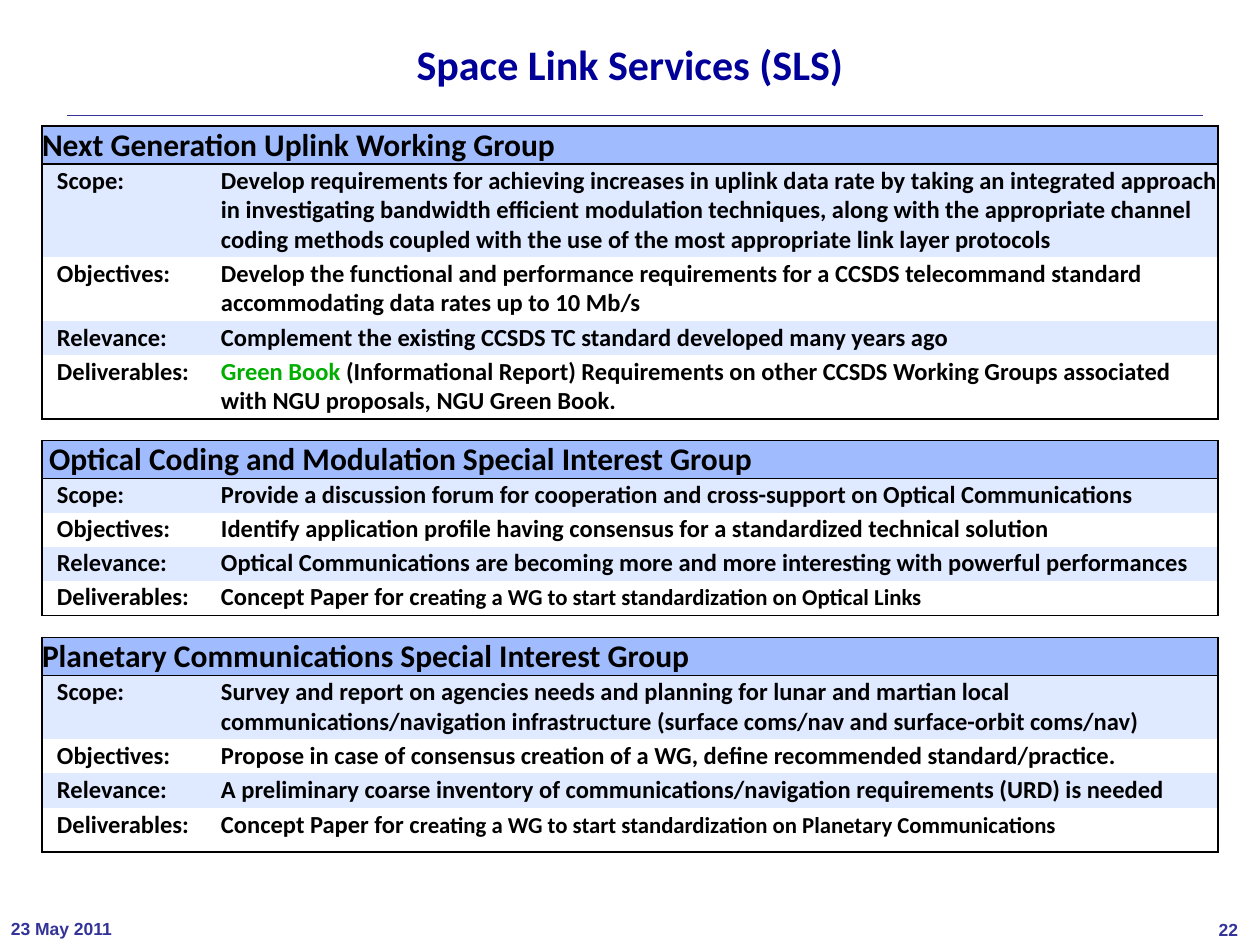
from lxml.etree import SubElement
from pptx import Presentation
from pptx.dml.color import RGBColor
from pptx.enum.shapes import MSO_CONNECTOR
from pptx.enum.text import MSO_ANCHOR, PP_ALIGN
from pptx.oxml.ns import qn
from pptx.util import Emu, Pt

SCALE = 914400 // 126
BLACK, TITLE_BLUE, RULE_BLUE = "000000", "000099", "333399"
HEADING_FILL, BAND_FILL, GREEN = "A0BCFE", "DFE9FF", "00AE00"
TABLE_LEFT, TABLE_TOP = 42, 126
COLUMN_WIDTHS = [179, 997]
HEADING_HEIGHT, SPACER_HEIGHT = 37, 22
LABELS = ["Scope:", "Objectives:", "Relevance:", "Deliverables:"]
LABEL_INDENT, CELL_INSET = 15, 2

GROUPS = [
    ("Next Generation Uplink Working Group", [93, 64, 34, 64], [
        [("Develop requirements for achieving increases in uplink data rate by taking an integrated "
          "approach in investigating bandwidth efficient modulation techniques, along with the "
          "appropriate channel coding methods coupled with the use of the most appropriate link "
          "layer protocols", {})],
        [("Develop the functional and performance requirements for a CCSDS telecommand standard "
          "accommodating data rates up to 10 Mb/s", {})],
        [("Complement the existing CCSDS TC standard developed many years ago", {})],
        [("Green Book ", {"color": GREEN}),
         ("(Informational Report) Requirements on other CCSDS Working Groups associated with "
          "NGU proposals, NGU Green Book.", {})],
    ]),
    (" Optical Coding and Modulation Special Interest Group", [34, 34, 34, 35], [
        [("Provide a discussion forum for cooperation and cross-support on Optical "
          "Communications", {})],
        [("Identify application profile having consensus for a standardized technical solution", {})],
        [("Optical Communications are becoming more and more interesting with powerful "
          "performances", {})],
        [("Concept Paper for c", {}),
         ("reating a WG to start standardization on Optical Links", {"size": 13})],
    ]),
    ("Planetary Communications Special Interest Group", [64, 34, 35, 44], [
        [("Survey and report on agencies needs and planning for lunar and martian local "
          "communications/navigation infrastructure (surface coms/nav and surface-orbit "
          "coms/nav)", {})],
        [("Propose in case of consensus creation of a WG, define recommended "
          "standard/practice.", {})],
        [("A preliminary coarse inventory of communications/navigation requirements (URD) is "
          "needed", {})],
        [("Concept Paper for c", {}),
         ("reating a WG to start standardization on Planetary Communications", {"size": 13})],
    ]),
]


def px(length):
    return Emu(length * SCALE)


def rgb(color):
    return RGBColor.from_string(color)


def write(para, text, size=14, font="Calibri", color=BLACK):
    span = para.add_run()
    span.text = text
    span.font.size = Pt(size)
    span.font.name = font
    span.font.bold = True
    span.font.color.rgb = rgb(color)


def add_text(page, left, top, width, height, text, align=PP_ALIGN.LEFT, spacing=1.0, **style):
    box = page.shapes.add_textbox(px(left), px(top), px(width), px(height))
    frame = box.text_frame
    frame.word_wrap = True
    frame.margin_left = frame.margin_right = 0
    frame.margin_top = frame.margin_bottom = 0
    frame.vertical_anchor = MSO_ANCHOR.MIDDLE
    para = frame.paragraphs[0]
    para.alignment = align
    para.line_spacing = spacing
    write(para, text, **style)


def add_rule(page, left, right, top):
    rule = page.shapes.add_connector(MSO_CONNECTOR.STRAIGHT, px(left), px(top), px(right), px(top))
    rule.line.color.rgb = rgb(RULE_BLUE)
    rule.line.width = Pt(0.13)
    SubElement(rule._element.spPr, qn("a:effectLst"))


def format_cell(cell, edges, fill=None, inset=0):
    cell.margin_left = cell.margin_right = 0
    cell.margin_top = cell.margin_bottom = px(inset)
    properties = cell._tc.get_or_add_tcPr()
    for edge in "LRTB":
        line = SubElement(properties, qn(f"a:ln{edge}"), w=str(Pt(1)))
        if edge in edges:
            solid = SubElement(line, qn("a:solidFill"))
            SubElement(solid, qn("a:srgbClr"), val=BLACK)
        else:
            SubElement(line, qn("a:noFill"))
    if fill:
        cell.fill.solid()
        cell.fill.fore_color.rgb = rgb(fill)
    else:
        cell.fill.background()


def shrink_empty(cell):
    cell.text_frame.paragraphs[0]._p.get_or_add_endParaRPr().set("sz", "800")


def fill_spanning_row(table, row, edges, fill=None, text=""):
    first, second = table.cell(row, 0), table.cell(row, 1)
    first.merge(second)
    format_cell(first, edges, fill)
    format_cell(second, edges.replace("L", ""), fill)
    shrink_empty(second)
    if text:
        write(first.text_frame.paragraphs[0], text, size=18)
    else:
        shrink_empty(first)


def fill_body_row(table, row, index, spans):
    edges = {0: "T", len(LABELS) - 1: "B"}.get(index, "")
    fill = BAND_FILL if index % 2 == 0 else None
    label, detail = table.cell(row, 0), table.cell(row, 1)
    format_cell(label, edges + "L", fill, CELL_INSET)
    format_cell(detail, edges + "R", fill, CELL_INSET)
    para = label.text_frame.paragraphs[0]
    para._p.get_or_add_pPr().set("marL", str(px(LABEL_INDENT)))
    write(para, LABELS[index])
    for text, style in spans:
        write(detail.text_frame.paragraphs[0], text, **style)


def add_group_table(page):
    heights = []
    for _, body_heights, _ in GROUPS:
        heights += [HEADING_HEIGHT, *body_heights, SPACER_HEIGHT]
    heights.pop()
    frame = page.shapes.add_table(len(heights), 2, px(TABLE_LEFT), px(TABLE_TOP),
                                  px(sum(COLUMN_WIDTHS)), px(sum(heights)))
    table = frame.table
    table.first_row = table.horz_banding = False
    for column, width in zip(table.columns, COLUMN_WIDTHS):
        column.width = px(width)
    for row, height in zip(table.rows, heights):
        row.height = px(height)
    rows_per_group = len(LABELS) + 2
    for number, (heading, _, details) in enumerate(GROUPS):
        start = number * rows_per_group
        if number:
            fill_spanning_row(table, start - 1, "TB")
        fill_spanning_row(table, start, "LRTB", HEADING_FILL, heading)
        for index, spans in enumerate(details):
            fill_body_row(table, start + 1 + index, index, spans)


def main():
    deck = Presentation()
    deck.slide_width, deck.slide_height = px(1260), px(945)
    page = deck.slides.add_slide(deck.slide_layouts[6])
    footer = {"size": 10, "font": "Arial", "color": RULE_BLUE}
    add_rule(page, 67, 1203, 115)
    add_text(page, 1198, 913, 40, 33, "22", align=PP_ALIGN.RIGHT, **footer)
    add_text(page, 11, 912, 140, 33, "23 May 2011", **footer)
    add_group_table(page)
    add_text(page, 63, 33, 1134, 67, "Space Link Services (SLS)",
             align=PP_ALIGN.CENTER, spacing=0.9, size=24, color=TITLE_BLUE)
    deck.save("out.pptx")


if __name__ == "__main__":
    main()
